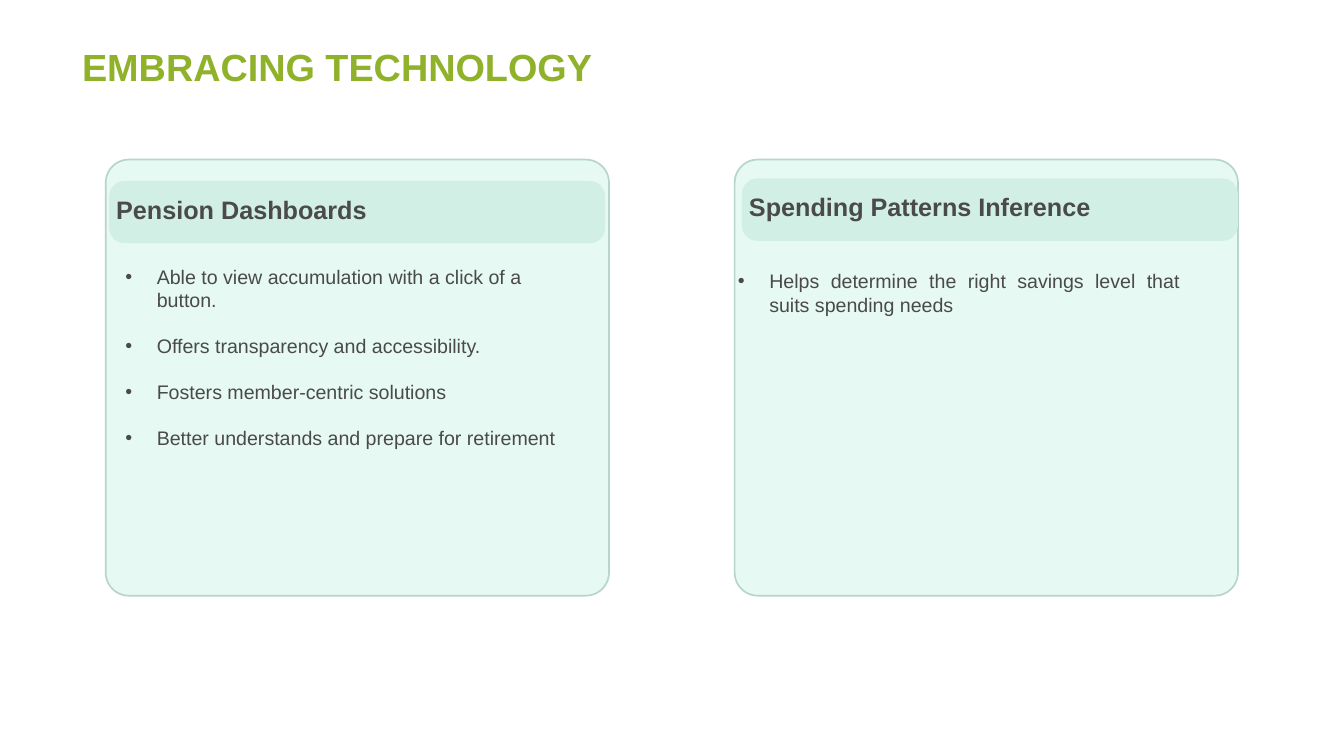
import pptx
import pptx.dml.color
import pptx.enum.shapes
import pptx.enum.text
import pptx.oxml.ns
import pptx.util
from lxml import etree

Pt = pptx.util.Pt
ALIGN = pptx.enum.text.PP_ALIGN
ANCHOR = pptx.enum.text.MSO_ANCHOR
qn = pptx.oxml.ns.qn

TITLE_GREEN = "90B22B"
INK = "4B4A4A"
CARD_FILL = "E5F9F2"
CARD_LINE = "B7D5CA"
BAND_FILL = "D1EFE4"

TITLE_FONT = {"name": "Arial", "size": Pt(54), "bold": True}
HEADING_FONT = {"name": "Arial", "size": Pt(36), "bold": True}
BODY_FONT = {"name": "Arial", "size": Pt(28)}


def rgb(value):
    return pptx.dml.color.RGBColor.from_string(value)


def set_attrs(obj, values):
    for name, value in values.items():
        setattr(obj, name, value)


def style_font(font, values, color):
    set_attrs(font, values)
    font.color.rgb = rgb(color)


def add_round_rect(shapes, x, y, w, h, adj, fill, line=None, alpha=None):
    kind = pptx.enum.shapes.MSO_SHAPE.ROUNDED_RECTANGLE
    sp = shapes.add_shape(kind, Pt(x), Pt(y), Pt(w), Pt(h))
    sp.shadow.inherit = False
    sp.adjustments[0] = adj
    sp.fill.solid()
    sp.fill.fore_color.rgb = rgb(fill)
    if alpha:
        clr = sp.fill._xPr.find(".//" + qn("a:srgbClr"))
        etree.SubElement(clr, qn("a:alpha")).set("val", str(alpha * 1000))
    if line:
        sp.line.color.rgb = rgb(line)
        sp.line.width = Pt(2.4)
    else:
        sp.line.fill.background()


def add_text_box(shapes, x, y, w, h, left=0):
    tf = shapes.add_textbox(Pt(x), Pt(y), Pt(w), Pt(h)).text_frame
    set_attrs(tf, {"word_wrap": True, "margin_left": Pt(left), "margin_right": 0,
                   "margin_top": 0, "margin_bottom": 0})
    return tf


def add_bullet(p, indent):
    pPr = p._p.get_or_add_pPr()
    pPr.set("marL", str(Pt(indent)))
    pPr.set("indent", str(-Pt(indent)))
    etree.SubElement(pPr, qn("a:buFont")).set("typeface", "Arial")
    etree.SubElement(pPr, qn("a:buChar")).set("char", "•")


def add_title(s, x, y, w, h, text):
    sp = s.shapes.title
    set_attrs(sp, {"left": Pt(x), "top": Pt(y), "width": Pt(w), "height": Pt(h)})
    tf = sp.text_frame
    set_attrs(tf, {"word_wrap": True, "vertical_anchor": ANCHOR.MIDDLE,
                   "auto_size": pptx.enum.text.MSO_AUTO_SIZE.NONE})
    p = tf.paragraphs[0]
    set_attrs(p, {"alignment": ALIGN.LEFT, "line_spacing": 0.9})
    r = p.add_run()
    r.text = text
    style_font(r.font, TITLE_FONT, TITLE_GREEN)


def add_card(s, x, y, w, h, heading, items, band, body, align):
    shapes = s.shapes.add_group_shape().shapes
    add_round_rect(shapes, x, y, w, h, 0.053, CARD_FILL, CARD_LINE, 95)

    dx, dy, body_h = body
    tf = add_text_box(shapes, x + dx, y + dy, 631, body_h)
    for i, item in enumerate(items):
        p = tf.paragraphs[0] if i == 0 else tf.add_paragraph()
        add_bullet(p, 45)
        p.alignment = align
        if i:
            p.space_before = Pt(32)
        r = p.add_run()
        r.text = item
        style_font(r.font, BODY_FONT, INK)

    dx, dy = band
    add_round_rect(shapes, x + dx, y + dy, 708.5, 89, 0.246, BAND_FILL)
    tf = add_text_box(shapes, x + dx, y + dy + 18, 686, 56, left=10)
    p = tf.paragraphs[0]
    p.line_spacing = Pt(44.2)
    r = p.add_run()
    r.text = heading
    style_font(r.font, HEADING_FONT, INK)


def main():
    prs = pptx.Presentation()
    set_attrs(prs, {"slide_width": Pt(1920), "slide_height": Pt(1080)})
    s = prs.slides.add_slide(prs.slide_layouts[5])
    add_title(s, 110, 69, 1505.5, 61, "EMBRACING TECHNOLOGY")
    cards = [
        ("Pension Dashboards",
         ["Able to view accumulation with a click of a button.",
          "Offers transparency and accessibility.",
          "Fosters member-centric solutions",
          "Better understands and prepare for retirement"],
         (5, 30.5), (28, 150, 95), ALIGN.LEFT),
        ("Spending Patterns Inference",
         ["Helps determine the right savings level that suits spending needs"],
         (10.5, 27), (4.5, 156.5, 47.5), ALIGN.JUSTIFY),
    ]
    for i, card in enumerate(cards):
        add_card(s, 151 + i * 898.5, 228, 719, 623, *card)
    prs.save("out.pptx")


if __name__ == "__main__":
    main()
